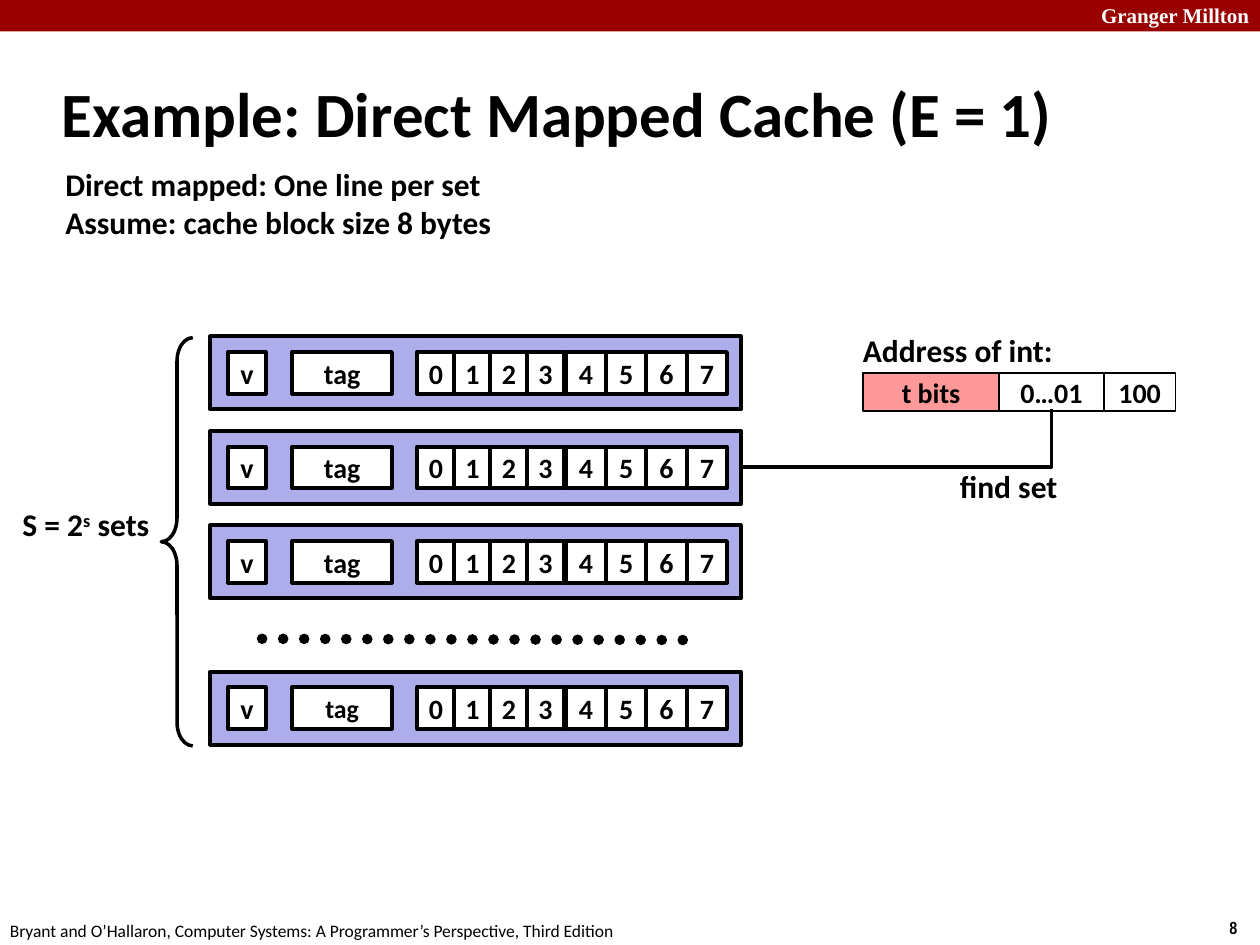
from lxml import etree
from pptx import Presentation
from pptx import util as u
from pptx.dml.color import RGBColor
from pptx.enum import dml, shapes, text
from pptx.oxml import ns

COLORS = {
    "ink": "000000",
    "paper": "FFFFFF",
    "banner": "990000",
    "set": "ADADEB",
    "tag_bits": "FF9999",
}
HEADING = {"name": "Calibri", "size": u.Pt(36), "bold": True}
LABEL = {"name": "Calibri", "size": u.Pt(18), "bold": True}
CELL = {"name": "Calibri", "size": u.Pt(16), "bold": True}
SMALL_CELL = {"name": "Calibri", "size": u.Pt(14.8), "bold": True}
CREDIT = {"name": "Calibri", "size": u.Pt(10), "bold": False}
NUMBER = {"name": "Arial Narrow", "size": u.Pt(10), "bold": True}
SCHOOL = {"name": "Times New Roman", "size": u.Pt(12), "bold": True}

SET_LEFT, SET_WIDTH, SET_HEIGHT = 1.67, 4.21, 0.58
SET_TOPS = (2.67, 3.42, 4.17, 5.33)
CELL_HEIGHT = 0.33
ADDRESS_FIELDS = (
    ("t bits", 1.08, "tag_bits"),
    ("0…01", 0.83, "paper"),
    ("100", 0.57, "paper"),
)


def color(name):
    return RGBColor.from_string(COLORS[name])


def inches(*lengths):
    return [u.Inches(length) for length in lengths]


def add_span(para, words, style, ink="ink"):
    span = para.add_run()
    span.text = words
    for name, value in style.items():
        setattr(span.font, name, value)
    span.font.color.rgb = color(ink)
    return span


def add_label(page, place, lines, style, ink="ink"):
    box = page.shapes.add_textbox(*inches(*place))
    frame = box.text_frame
    frame.word_wrap = False
    for index, line in enumerate(lines):
        para = frame.add_paragraph() if index else frame.paragraphs[0]
        para.alignment = text.PP_ALIGN.LEFT
        add_span(para, line, style, ink)
    return box


def add_box(page, place, fill, weight=0.0, words="", style=CELL):
    box = page.shapes.add_shape(shapes.MSO_SHAPE.RECTANGLE, *inches(*place))
    box.shadow.inherit = False
    box.fill.solid()
    box.fill.fore_color.rgb = color(fill)
    if weight:
        box.line.color.rgb = color("ink")
        box.line.width = u.Pt(weight)
    else:
        box.line.fill.background()
    if words:
        frame = box.text_frame
        frame.word_wrap = False
        frame.vertical_anchor = text.MSO_ANCHOR.MIDDLE
        para = frame.paragraphs[0]
        para.alignment = text.PP_ALIGN.CENTER
        add_span(para, words, style)
    return box


def add_line(page, kind, ends, weight):
    line = page.shapes.add_connector(kind, *inches(*ends))
    line.line.color.rgb = color("ink")
    line.line.width = u.Pt(weight)
    etree.SubElement(line._element.spPr, ns.qn("a:effectLst"))
    return line


def add_title(page):
    title = page.shapes.title
    title.left, title.top, title.width, title.height = inches(0.39, 0.48, 8.3, 0.83)
    frame = title.text_frame
    frame.vertical_anchor = text.MSO_ANCHOR.MIDDLE
    frame.auto_size = text.MSO_AUTO_SIZE.NONE
    para = frame.paragraphs[0]
    para.alignment = text.PP_ALIGN.LEFT
    add_span(para, "Example: Direct Mapped Cache (E = 1)", HEADING)


def add_frame(page):
    add_box(page, (0, 0, 10, 0.25), "banner")
    add_label(page, (8.64, -0.03, 1.43, 0.3), ["Granger Millton"], SCHOOL, "paper")
    add_label(page, (9.66, 7.23, 0.34, 0.27), ["8"], NUMBER)
    credit = "Bryant and O’Hallaron, Computer Systems: A Programmer’s Perspective, Third Edition"
    add_label(page, (-0.02, 7.25, 5.08, 0.27), [credit], CREDIT)


def add_cache_set(page, top, tag_style):
    add_box(page, (SET_LEFT, top, SET_WIDTH, SET_HEIGHT), "set", 2.25)
    cells = [("v", 1.81, 0.3, CELL), ("tag", 2.32, 0.79, tag_style)]
    cells += [(str(byte), 3.31 + 0.29 * byte, 0.3, CELL) for byte in range(4)]
    cells += [(str(byte), 4.49 + 0.32 * (byte - 4), 0.32, CELL) for byte in range(4, 8)]
    cell_top = top + (SET_HEIGHT - CELL_HEIGHT) / 2
    for words, left, width, style in cells:
        add_box(page, (left, cell_top, width, CELL_HEIGHT), "paper", 2.25, words, style)


def add_set_count(page):
    brace = page.shapes.add_shape(
        shapes.MSO_SHAPE.LEFT_BRACE, *inches(1.28, 2.68, 0.25, 3.24)
    )
    brace.adjustments[0] = 0.75
    brace.shadow.inherit = False
    brace.fill.background()
    brace.line.color.rgb = color("ink")
    brace.line.width = u.Pt(2)
    label = add_label(page, (0.08, 3.96, 1.23, 0.4), ["S = 2"], LABEL)
    para = label.text_frame.paragraphs[0]
    exponent = add_span(para, "s", LABEL)
    exponent._r.get_or_add_rPr().set("baseline", "30000")
    add_span(para, " sets", LABEL)


def add_omitted_sets(page):
    dots = add_line(page, shapes.MSO_CONNECTOR.STRAIGHT, (2.08, 5.07, 5.5, 5.08), 6)
    dots.line.dash_style = dml.MSO_LINE.ROUND_DOT
    dots._element.spPr.find(ns.qn("a:ln")).set("cap", "rnd")


def add_address(page):
    left = 6.85
    for words, width, fill in ADDRESS_FIELDS:
        add_box(page, (left, 2.96, width, 0.3), fill, 1, words)
        left += width
    add_label(page, (6.75, 2.58, 1.72, 0.4), ["Address of int:"], LABEL)


def add_set_lookup(page):
    elbow = add_line(page, shapes.MSO_CONNECTOR.ELBOW, (6.88, 2.24, 7.34, 4.71), 2)
    outline = elbow._element.spPr
    outline.find(ns.qn("a:prstGeom")).set("prst", "bentConnector2")
    outline.find(ns.qn("a:xfrm")).set("rot", str(90 * 60000))
    add_label(page, (7.52, 3.66, 0.98, 0.4), ["find set"], LABEL)


def main():
    deck = Presentation()
    deck.slide_width, deck.slide_height = inches(10, 7.5)
    page = deck.slides.add_slide(deck.slide_layouts[5])
    add_frame(page)
    add_title(page)
    add_set_count(page)
    add_omitted_sets(page)
    facts = ["Direct mapped: One line per set", "Assume: cache block size 8 bytes"]
    add_label(page, (0.42, 1.26, 3.61, 0.71), facts, LABEL)
    add_address(page)
    for top in SET_TOPS:
        add_cache_set(page, top, SMALL_CELL if top == SET_TOPS[-1] else CELL)
    add_set_lookup(page)
    deck.save("out.pptx")


if __name__ == "__main__":
    main()
